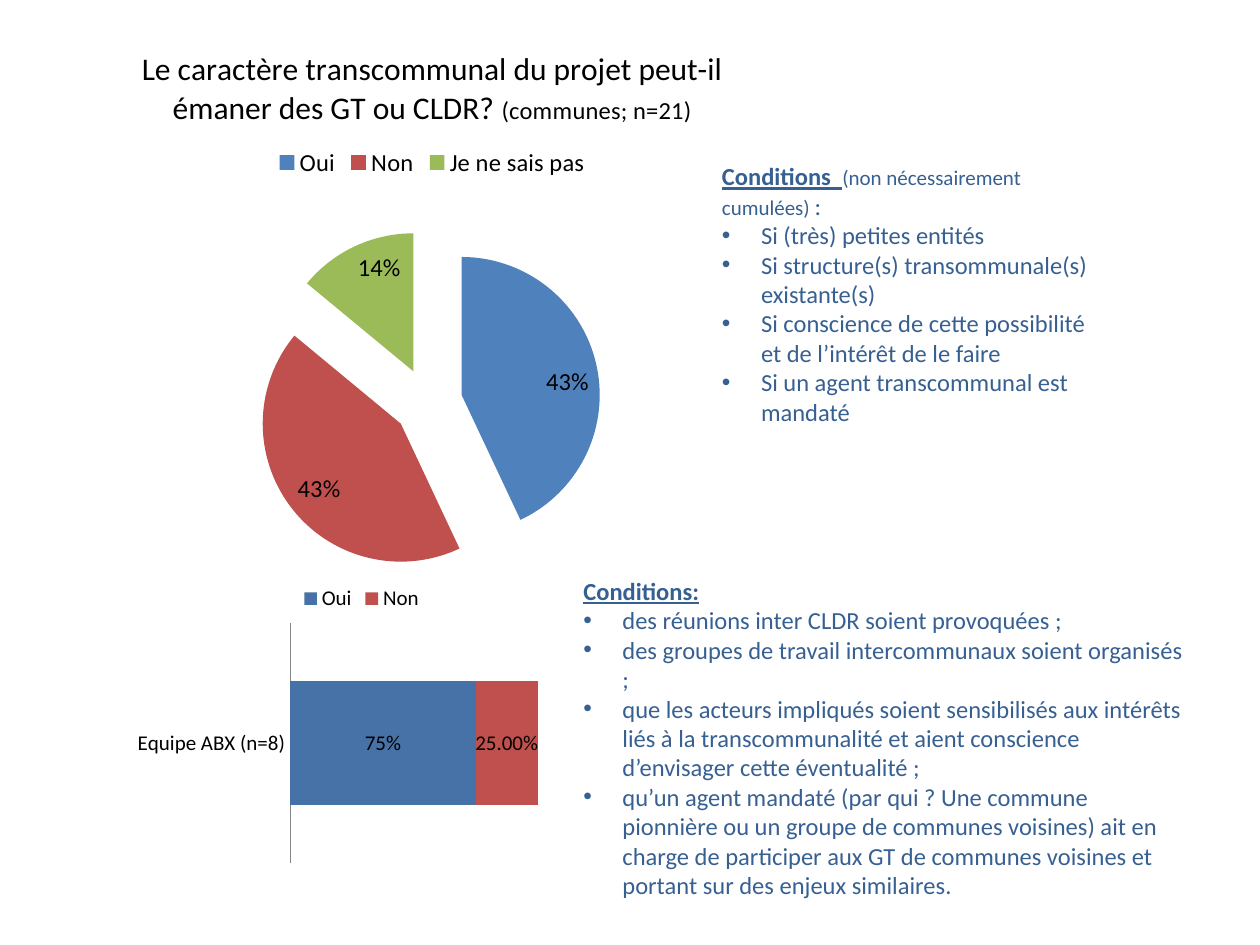
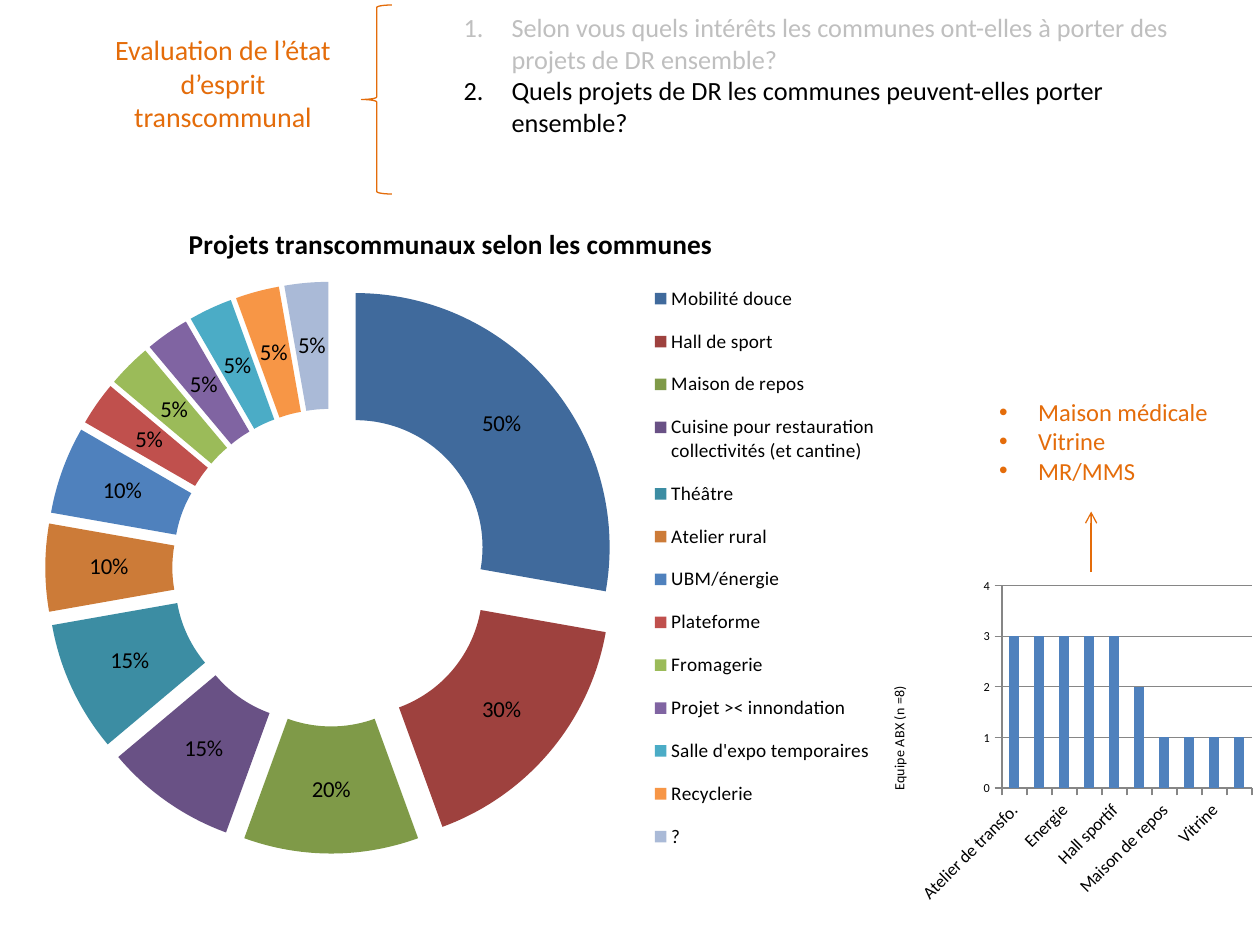
from dataclasses import dataclass

from lxml import etree
from pptx import Presentation
from pptx.chart.data import CategoryChartData
from pptx.dml.color import RGBColor
from pptx.enum.chart import XL_CHART_TYPE, XL_LABEL_POSITION, XL_LEGEND_POSITION, XL_TICK_MARK
from pptx.enum.shapes import MSO_CONNECTOR, MSO_SHAPE
from pptx.enum.text import MSO_ANCHOR, MSO_AUTO_SIZE
from pptx.oxml.ns import qn
from pptx.util import Inches, Pt

PIE, DOUGHNUT = XL_CHART_TYPE.PIE, XL_CHART_TYPE.DOUGHNUT
STACKED, COLUMNS = XL_CHART_TYPE.BAR_STACKED, XL_CHART_TYPE.COLUMN_CLUSTERED
LEGEND_TOP, LEGEND_RIGHT = XL_LEGEND_POSITION.TOP, XL_LEGEND_POSITION.RIGHT
INSIDE_END = XL_LABEL_POSITION.INSIDE_END
TICK_NONE, TICK_OUT = XL_TICK_MARK.NONE, XL_TICK_MARK.OUTSIDE
LEFT_BRACE, STRAIGHT = MSO_SHAPE.LEFT_BRACE, MSO_CONNECTOR.STRAIGHT
TOP, NO_FIT = MSO_ANCHOR.TOP, MSO_AUTO_SIZE.NONE

FONT = "Calibri"
TEAM = "Equipe ABX"
BLACK, GREY, AXIS_GREY = "000000", "BFBFBF", "868686"
NAVY, ORANGE = "376092", "E46C0A"
BLUE, RED, GREEN = "4F81BD", "C0504D", "9BBB59"
ACCENTS = [BLUE, RED, GREEN, "8064A2", "4BACC6", "F79646"]
DARK_ACCENTS = ["406A9C", "9E413E", "7F9A48", "695185", "3C8DA3", "CC7B38"]
BULLET, NUMBER = ("a:buChar", "char", "•"), ("a:buAutoNum", "type", "arabicPeriod")
COLUMN_COUNT, ROW_COUNT = 100, 75


@dataclass
class Box:
    """A rectangle divided into a grid of columns and rows."""
    left: int
    top: int
    width: int
    height: int

    def cell(self, column, row, columns, rows):
        """Return the box that covers the given grid columns and rows."""
        across, down = self.width / COLUMN_COUNT, self.height / ROW_COUNT
        return Box(int(self.left + column * across), int(self.top + row * down),
                   int(columns * across), int(rows * down))

    def frame(self):
        """Return left, top, width and height."""
        return self.left, self.top, self.width, self.height


def colour(code):
    """Turn a hex string into a colour."""
    return RGBColor.from_string(code)


def style_font(font, size, code=BLACK, bold=False, underline=None):
    """Apply the deck's font with a size, colour and weight."""
    font.name, font.size, font.bold, font.underline = FONT, Pt(size), bold, underline
    font.color.rgb = colour(code)


def write_spans(para, spans):
    """Write (text, size, colour, bold and underlined) runs into a paragraph."""
    for text, size, code, strong in spans:
        span = para.add_run()
        span.text = text
        style_font(span.font, size, code, strong, strong or None)


def set_marker(para, marker, indent):
    """Give a paragraph its bullet or number with a hanging indent."""
    settings = para._p.get_or_add_pPr()
    settings.set("marL", str(Inches(indent)))
    settings.set("indent", str(-Inches(indent)))
    if marker:
        kind, key, value = marker
        etree.SubElement(settings, qn(kind)).set(key, value)
    else:
        etree.SubElement(settings, qn("a:buNone"))


def fill_placeholder(holder, box, paragraphs, marker=None, indent=0.31):
    """Place a placeholder and write its (spans, marked) paragraphs."""
    holder.left, holder.top, holder.width, holder.height = box.frame()
    frame = holder.text_frame
    frame.word_wrap, frame.auto_size, frame.vertical_anchor = True, NO_FIT, TOP
    for index, (spans, marked) in enumerate(paragraphs):
        para = frame.add_paragraph() if index else frame.paragraphs[0]
        para.space_before = Pt(0)
        set_marker(para, marker if marked else None, indent if marked else 0)
        write_spans(para, spans)


def items(texts, size, code):
    """Make one marked paragraph out of each text."""
    return [([(text, size, code, False)], True) for text in texts]


def set_layout(element, index, **shares):
    """Fix where a chart part stands, in shares of the chart."""
    for old in element.findall(qn("c:layout")):
        element.remove(old)
    layout = etree.Element(qn("c:layout"))
    manual = etree.SubElement(layout, qn("c:manualLayout"))
    if element.tag == qn("c:plotArea"):
        etree.SubElement(manual, qn("c:layoutTarget")).set("val", "inner")
    for key in ("x", "y"):
        etree.SubElement(manual, qn(f"c:{key}Mode")).set("val", "edge")
    for key, value in shares.items():
        etree.SubElement(manual, qn(f"c:{key}")).set("val", str(value))
    element.insert(index, layout)


def add_chart(slide, box, kind, categories, series, size, plot_shares):
    """Add a transparent chart with the deck's font and a fixed plot area."""
    data = CategoryChartData()
    data.categories = categories
    for name, values in series:
        data.add_series(name, values)
    chart = slide.shapes.add_chart(kind, *box.frame(), data).chart
    style_font(chart.font, size)
    chart.has_title = chart.has_legend = False
    area = etree.Element(qn("c:spPr"))
    etree.SubElement(area, qn("a:noFill"))
    etree.SubElement(etree.SubElement(area, qn("a:ln")), qn("a:noFill"))
    space = chart._chartSpace
    space.find(qn("c:chart")).addnext(area)
    x, y, w, h = plot_shares
    set_layout(space.find(".//" + qn("c:plotArea")), 0, x=x, y=y, w=w, h=h)
    return chart


def add_legend(chart, position, size):
    """Show the legend outside the plot area."""
    chart.has_legend = True
    chart.legend.position = position
    chart.legend.include_in_layout = False
    style_font(chart.legend.font, size)


def add_chart_title(chart, runs):
    """Write (text, size, bold) runs as the chart's title."""
    chart.has_title = True
    para = chart.chart_title.text_frame.paragraphs[0]
    for text, size, bold in runs:
        span = para.add_run()
        span.text = text
        style_font(span.font, size, BLACK, bold)


def label_series(series, size, number_format="0%", percent=False):
    """Label the points of a series with values or percentages."""
    labels = series.data_labels
    labels.show_percentage, labels.show_value = percent, not percent
    labels.number_format, labels.number_format_is_linked = number_format, False
    style_font(labels.font, size)
    return labels


def explode_slices(series, colours):
    """Pull the slices apart and colour each one."""
    explosion = etree.Element(qn("c:explosion"))
    explosion.set("val", "25")
    series._element.find(qn("c:cat")).addprevious(explosion)
    for index, code in enumerate(colours):
        fill = series.points[index].format.fill
        fill.solid()
        fill.fore_color.rgb = colour(code)


def style_bars(chart, gap, colours):
    """Set the gap, the bar colours and the category axis line."""
    plot = chart.plots[0]
    plot.gap_width, plot.vary_by_categories = gap, False
    for series, code in zip(plot.series, colours):
        series.format.fill.solid()
        series.format.fill.fore_color.rgb = colour(code)
    chart.category_axis.format.line.color.rgb = colour(AXIS_GREY)


def draw_origin_pie(slide, box):
    """Draw the pie of the communes' answers."""
    chart = add_chart(slide, box, PIE, ["Oui", "Non", "Je ne sais pas"],
                      [("Communes", [43, 43, 14])], 18, (0.28, 0.36, 0.43, 0.61))
    add_chart_title(chart, [
        ("Le caractère transcommunal du projet peut-il émaner des GT ou CLDR? ", 18, False),
        ("(communes; n=21)", 14, False)])
    add_legend(chart, LEGEND_TOP, 14)
    answers = chart.plots[0].series[0]
    explode_slices(answers, [BLUE, RED, GREEN])
    label_series(answers, 14, percent=True).position = INSIDE_END


def draw_team_bar(slide, box):
    """Draw the stacked bar of the team's answers."""
    chart = add_chart(slide, box, STACKED, [f"{TEAM} (n=8)"],
                      [("Oui", [0.75]), ("Non", [0.25])], 10, (0.35, 0.17, 0.52, 0.81))
    add_legend(chart, LEGEND_TOP, 12)
    style_bars(chart, 95, ["4672A8", RED])
    chart.plots[0].overlap = 100
    for series, number_format in zip(chart.plots[0].series, ["0%", "0.00%"]):
        label_series(series, 12, number_format)
    chart.category_axis.major_tick_mark = TICK_NONE
    style_font(chart.category_axis.tick_labels.font, 12)
    shares = chart.value_axis
    shares.minimum_scale, shares.maximum_scale = 0, 1
    shares.visible = shares.has_major_gridlines = False


def draw_project_ring(slide, box):
    """Draw the ring of projects named by the communes."""
    projects = ["Mobilité douce", "Hall de sport", "Maison de repos",
                "Cuisine pour restauration collectivités (et cantine)", "Théâtre",
                "Atelier rural", "UBM/énergie", "Plateforme", "Fromagerie",
                "Projet >< innondation", "Salle d'expo temporaires", "Recyclerie", "?"]
    values = [0.5, 0.3, 0.2, 0.15, 0.15, 0.1, 0.1] + [0.05] * 6
    chart = add_chart(slide, box, DOUGHNUT, projects, [("Projets", values)], 13,
                      (0.06, 0.12, 0.62, 0.85))
    add_chart_title(chart, [("Projets transcommunaux selon les communes", 15.6, True)])
    add_legend(chart, LEGEND_RIGHT, 11)
    set_layout(chart.legend._element, 1, x=0.71, y=0.1, w=0.26, h=0.89)
    ring = chart.plots[0].series[0]
    explode_slices(ring, DARK_ACCENTS + ACCENTS + ["AABAD7"])
    label_series(ring, 13)


def draw_team_columns(slide, box):
    """Draw the columns of projects named by the team."""
    projects = ["Atelier de transfo.", "Atelier rural", "Energie", "Mobilité", "Hall sportif",
                "Maison médicale", "Maison de repos", "Plateforme de redistri.", "Vitrine",
                "MR/MMS"]
    chart = add_chart(slide, box, COLUMNS, projects, [("Equipe", [3] * 5 + [2] + [1] * 4)], 10,
                      (0.35, 0.04, 0.63, 0.6))
    style_bars(chart, 150, [BLUE])
    names, counts = chart.category_axis, chart.value_axis
    names.major_tick_mark = counts.major_tick_mark = TICK_OUT
    style_font(names.tick_labels.font, 10)
    names._element.find(qn("c:txPr")).find(qn("a:bodyPr")).set("rot", "-2700000")
    style_font(counts.tick_labels.font, 7)
    counts.minimum_scale, counts.maximum_scale, counts.major_unit = 0, 4, 1
    for line in (counts.format.line, counts.major_gridlines.format.line):
        line.color.rgb = colour(AXIS_GREY)
    frame = counts.axis_title.text_frame
    frame.text = f"{TEAM} (n =8)"
    style_font(frame.paragraphs[0].runs[0].font, 8)
    frame._txBody.find(qn("a:bodyPr")).set("rot", "-5400000")
    set_layout(counts.axis_title._element, 1, x=0.06, y=0.33)


def draw_brace(slide, box):
    """Draw the brace between the theme and its questions."""
    brace = slide.shapes.add_shape(LEFT_BRACE, *box.frame())
    brace.shadow.inherit = False
    brace.fill.background()
    brace.line.color.rgb, brace.line.width = colour(ORANGE), Pt(0.75)


def draw_up_arrow(slide, box):
    """Draw an arrow from the bottom of the box to its top."""
    arrow = slide.shapes.add_connector(STRAIGHT, box.left, box.top + box.height,
                                       box.left, box.top)
    arrow.line.color.rgb, arrow.line.width = colour(ORANGE), Pt(0.75)
    etree.SubElement(arrow.line._get_or_add_ln(), qn("a:tailEnd")).set("type", "arrow")
    etree.SubElement(arrow._element.spPr, qn("a:effectLst"))


def build_conditions_slide(slide, page):
    """Build the slide on who may launch a project and on what conditions."""
    title, communes, team = slide.placeholders
    title._element.getparent().remove(title._element)
    draw_origin_pie(slide, page.cell(2, 2.1, 64.6, 44.9))
    draw_team_bar(slide, page.cell(9.8, 45.4, 37.8, 23.6))
    heading = [("Conditions  ", 14, NAVY, True), ("(non nécessairement cumulées) ", 12, NAVY, False),
               (":", 14, NAVY, False)]
    fill_placeholder(communes, page.cell(56.3, 12.3, 31.5, 25), [(heading, False)] + items([
        "Si (très) petites entités",
        "Si structure(s) transommunale(s) existante(s)",
        "Si conscience de cette possibilité et de l’intérêt de le faire",
        "Si un agent transcommunal est mandaté"], 14, NAVY), BULLET)
    heading = [("Conditions:", 14, NAVY, True)]
    fill_placeholder(team, page.cell(45.3, 45.2, 50, 26.9), [(heading, False)] + items([
        "des réunions inter CLDR soient provoquées ;",
        "des groupes de travail intercommunaux soient organisés ;",
        "que les acteurs impliqués soient sensibilisés aux intérêts liés à la "
        "transcommunalité et aient conscience d’envisager cette éventualité ;",
        "qu’un agent mandaté (par qui ? Une commune pionnière ou un groupe de communes "
        "voisines) ait en charge de participer aux GT de communes voisines et portant sur "
        "des enjeux similaires."], 14, NAVY), BULLET)


def build_projects_slide(slide, page):
    """Build the slide on the projects communes may carry together."""
    title, questions, extras = slide.placeholders
    theme = [("Evaluation de l’état d’esprit transcommunal", 16, ORANGE, False)]
    fill_placeholder(title, page.cell(6.7, 2.1, 22, 9.1), [(theme, False)])
    fill_placeholder(questions, page.cell(35.8, 0.4, 59.1, 13.6), items([
        "Selon vous quels intérêts les communes ont-elles à porter des projets de DR ensemble?"],
        15, GREY) + items([
            "Quels projets de DR les communes peuvent-elles porter ensemble?"], 15, BLACK),
        NUMBER, 0.38)
    draw_brace(slide, page.cell(28.7, 0.4, 2.4, 15))
    draw_project_ring(slide, page.cell(-0.8, 15.9, 73.2, 53.5))
    draw_team_columns(slide, page.cell(68.5, 45.4, 31.5, 26.8))
    fill_placeholder(extras, page.cell(78.3, 31, 19.7, 8.1),
                     items(["Maison médicale", "Vitrine", "MR/MMS"], 14, ORANGE), BULLET)
    draw_up_arrow(slide, page.cell(86.6, 40.6, 0, 4.8))


def main():
    """Build and save the deck."""
    deck = Presentation()
    deck.slide_width, deck.slide_height = Inches(10), Inches(7.5)
    page = Box(0, 0, deck.slide_width, deck.slide_height)
    for build in (build_conditions_slide, build_projects_slide):
        build(deck.slides.add_slide(deck.slide_layouts[3]), page)
    deck.save("out.pptx")


if __name__ == "__main__":
    main()
